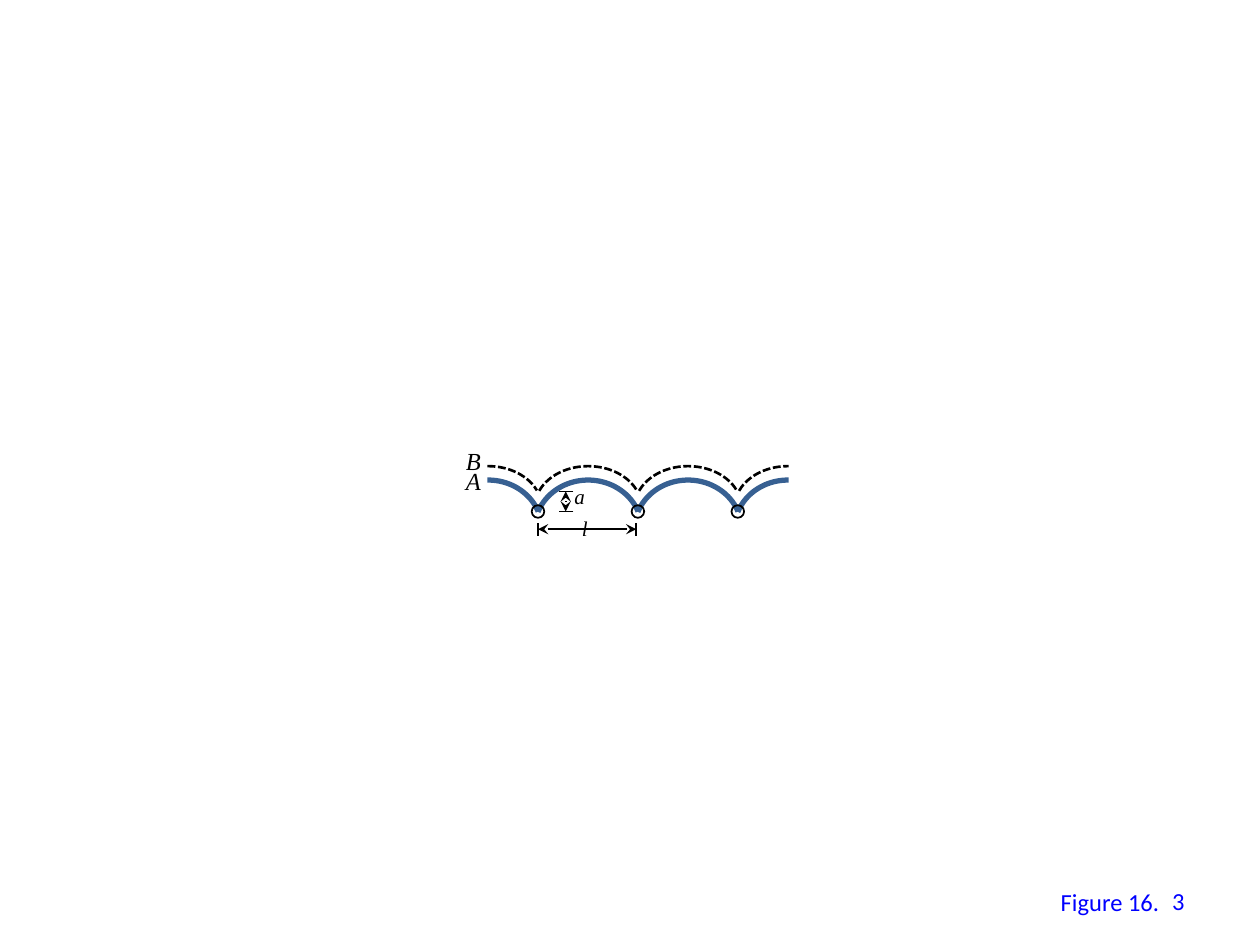
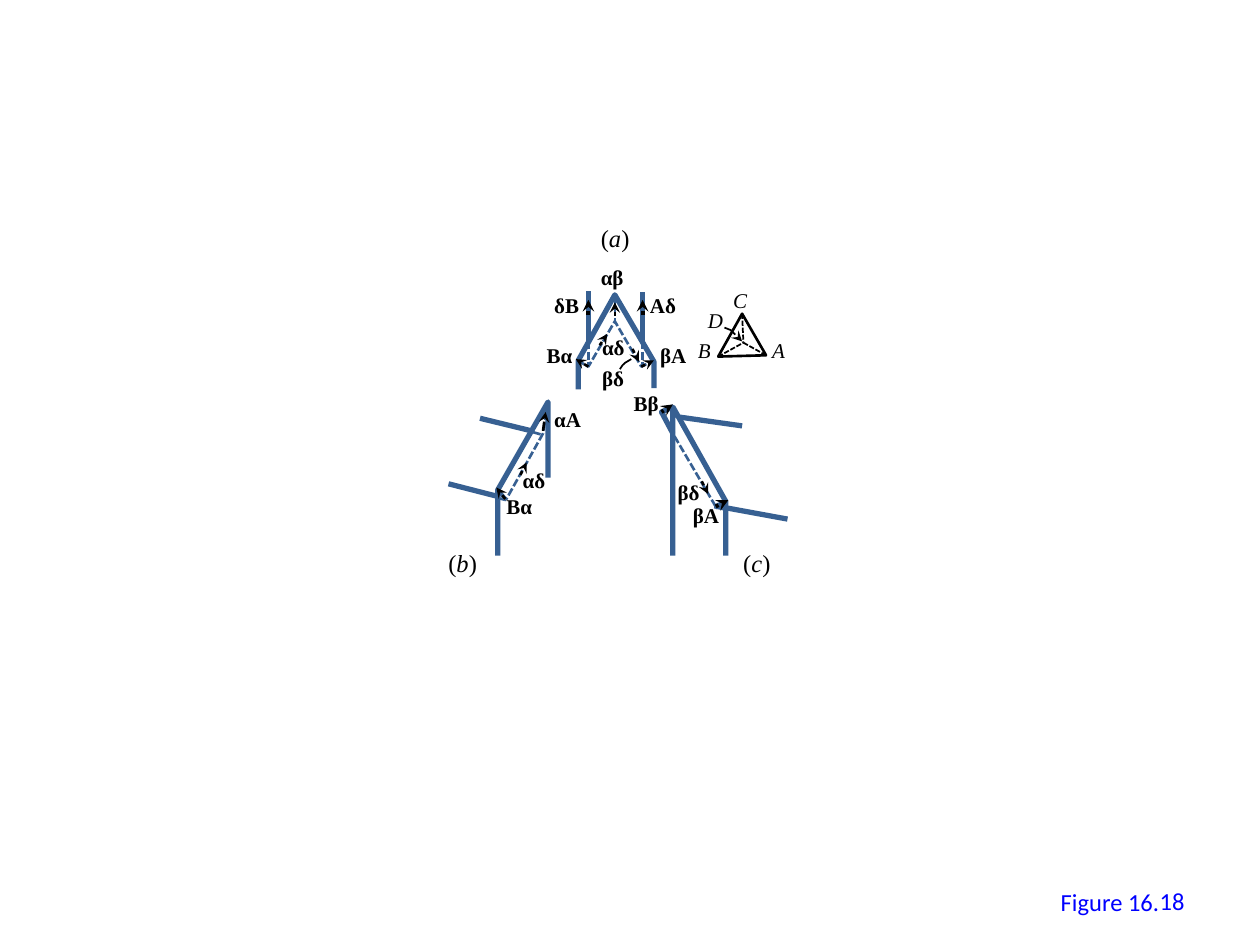
"""Build two figure slides: pinned bowed lines, and tetrahedron line geometry."""
from lxml import etree
from pptx import Presentation
from pptx import util as u
from pptx.dml.color import RGBColor
from pptx.enum import dml, shapes, text
from pptx.oxml.ns import qn

BLACK = RGBColor(0x00, 0x00, 0x00)
STEEL = RGBColor(0x37, 0x60, 0x92)
BLUE = RGBColor(0x00, 0x00, 0xFF)
SERIF, SANS = "Times New Roman", "Calibri"

EDGE = (STEEL, 3, False, ())
JOINT = (STEEL, 2.25, False, ())
HIDDEN = (STEEL, 1.5, True, ())
THIN = (BLACK, 1, False, ())
THIN_DASH = (BLACK, 1, True, ())
BOLD_DASH = (BLACK, 1.5, True, ())
FRAME = (BLACK, 1.5, False, ())
SPAN = (BLACK, 1, False, ("headEnd", "tailEnd"))
POINTER = (BLACK, 1, False, ("tailEnd",))
VECTOR = (BLACK, 1.5, False, ("tailEnd",))
HEAVY_VECTOR = (BLACK, 2.25, False, ("tailEnd",))

deck = Presentation()
deck.slide_width, deck.slide_height = u.Inches(10), u.Inches(7.5)
UNIT = deck.slide_width // 1000


def stroke(shape, style):
    colour, weight, dashed, ends = style
    shape.line.color.rgb = colour
    shape.line.width = u.Pt(weight)
    if dashed:
        shape.line.dash_style = dml.MSO_LINE.SQUARE_DOT
    properties = shape._element.spPr
    for end in ends:
        etree.SubElement(properties.find(qn("a:ln")), qn(f"a:{end}"), type="stealth")
    etree.SubElement(properties, qn("a:effectLst"))


def label(page, parts, left, top, width, size=12, bold=False, font=SERIF, colour=BLACK):
    height = 34 if size == 14 else 30
    box = page.shapes.add_textbox(*(round(n * UNIT) for n in (left, top, width, height)))
    box.text_frame.word_wrap = False
    box.text_frame.auto_size = text.MSO_AUTO_SIZE.SHAPE_TO_FIT_TEXT
    for part in parts:
        span = box.text_frame.paragraphs[0].add_run()
        span.text = part
        span.font.name, span.font.size = font, u.Pt(size)
        span.font.color.rgb = colour
        span.font.bold = bold
        span.font.italic = font == SERIF and not bold and part.isalpha()
    return box


pages = []
for number in ("3", "18"):
    page = deck.slides.add_slide(deck.slide_layouts[6])
    label(page, ["Figure 16."], 832, 699, 99, 14, font=SANS, colour=BLUE)
    box = label(page, [number], 717, 698, 233, 14, font=SANS, colour=BLUE)
    box.text_frame.word_wrap = True
    box.text_frame.vertical_anchor = text.MSO_ANCHOR.MIDDLE
    box.text_frame.paragraphs[0].alignment = text.PP_ALIGN.RIGHT
    pages.append(page)
bowing, tetrahedron = pages

PITCH = 79.3
ARC_DEGREES = [(269, 340.5), (199, 340.5), (199, 340.5), (199, 270.8)]
for top, height, style in ((381, 78, EDGE), (370, 66, BOLD_DASH)):
    for column, angles in enumerate(ARC_DEGREES):
        arc = bowing.shapes.add_shape(
            shapes.MSO_SHAPE.ARC, round((345 + column * PITCH) * UNIT),
            top * UNIT, 85 * UNIT, height * UNIT)
        for index, degrees in enumerate(angles):
            arc.adjustments[index] = degrees * 0.6
        arc.fill.background()
        stroke(arc, style)

for column in range(3):
    pin = bowing.shapes.add_shape(
        shapes.MSO_SHAPE.OVAL, round((422 + column * PITCH) * UNIT),
        401 * UNIT, 10 * UNIT, 10 * UNIT)
    pin.fill.background()
    stroke(pin, THIN)

for name, left, top, width, size in (
        ("l", 452, 404, 29, 12), ("a", 446, 379, 33, 12),
        ("A", 360, 365, 37, 14), ("B", 360, 349, 37, 14)):
    label(bowing, [name], left, top, width, size)

bowing_paths = {
    SPAN: [[(427, 420), (505, 420)], [(449, 406), (449, 390)]],
    THIN: [[(x, 425), (x, 415)] for x in (427, 505)]
    + [[(455, y), (444, y)] for y in (406, 390)],
}

tetrahedron_paths = {
    FRAME: [[(570, 283), (589, 249), (608, 282), (570, 283)]],
    THIN_DASH: [[corner, (590, 272)] for corner in ((589, 249), (570, 283), (608, 282))],
    POINTER: [[(575, 260), (580, 262), (584, 266), (589, 271)]],
    THIN: [[(501, 285), (496, 288), (494, 290), (492, 293)]],
    EDGE: [
        [(459, 309), (459, 286), (488, 234), (519, 287), (519, 308)],
        [(467, 231), (467, 271)], [(510, 232), (510, 272)],
        [(395, 441), (395, 389), (435, 319), (435, 379)],
        [(422, 342), (381, 332)], [(395, 394), (356, 384)],
        [(534, 441), (534, 323), (576, 398), (576, 441)],
        [(534, 344), (525, 327), (534, 323)],
        [(539, 331), (589, 338)], [(576, 403), (625, 412)],
    ],
    HIDDEN: [
        [(458, 286), (467, 291), (488, 255), (509, 291), (519, 286)],
        [(467, 271), (467, 291)], [(510, 271), (510, 291)], [(488, 236), (488, 256)],
        [(423, 343), (430, 345)], [(394, 395), (402, 397)],
        [(431, 344), (402, 396)], [(435, 319), (431, 344)], [(568, 402), (534, 344)],
    ],
    JOINT: [
        [(395, 389), (402, 397)], [(567, 402), (576, 398)],
        [(568, 403), (576, 398)], [(567, 402), (576, 404)],
    ],
    VECTOR: [
        [(488, 251), (488, 240)], [(476, 274), (482, 265)], [(502, 277), (507, 287)],
        [(509, 291), (519, 286)], [(467, 291), (457, 285)],
        [(413, 377), (418, 367)], [(431, 342), (433, 327)], [(401, 396), (394, 387)],
        [(557, 382), (562, 392)],
    ],
    HEAVY_VECTOR: [
        [(467, 250), (467, 238)], [(510, 250), (510, 238)],
        [(525, 327), (534, 321)], [(568, 402), (578, 397)],
    ],
}

for page, paths in ((bowing, bowing_paths), (tetrahedron, tetrahedron_paths)):
    for style, outlines in paths.items():
        for outline in outlines:
            points = [(x * UNIT, y * UNIT) for x, y in outline]
            if len(points) == 2:
                shape = page.shapes.add_connector(
                    shapes.MSO_CONNECTOR.STRAIGHT, *points[0], *points[1])
            else:
                builder = page.shapes.build_freeform(*points[0])
                builder.add_line_segments(points[1:], close=points[0] == points[-1])
                shape = builder.convert_to_shape()
                shape.fill.background()
            stroke(shape, style)

for name, left, top, width in (
        ("D", 552, 239, 37), ("C", 572, 223, 36), ("B", 544, 263, 35), ("A", 603, 263, 35)):
    label(tetrahedron, [name], left, top, width)

for name, left, top, width in (
        ("αβ", 467, 205, 40), ("δB", 430, 227, 41), ("Aδ", 506, 227, 42),
        ("Bα", 424, 267, 42), ("αδ", 468, 261, 40), ("βδ", 468, 285, 39),
        ("βA", 514, 267, 43), ("αA", 430, 318, 43), ("αδ", 405, 366, 40),
        ("Bα", 392, 387, 42), ("Bβ", 493, 305, 41), ("βδ", 528, 376, 39),
        ("βA", 540, 394, 43)):
    label(tetrahedron, [name], left, top, width, bold=True)

for name, left, top in (("a", 467, 172), ("b", 346, 430), ("c", 580, 430)):
    label(tetrahedron, ["(", name, ")"], left, top, 43, 14)

deck.save("out.pptx")
